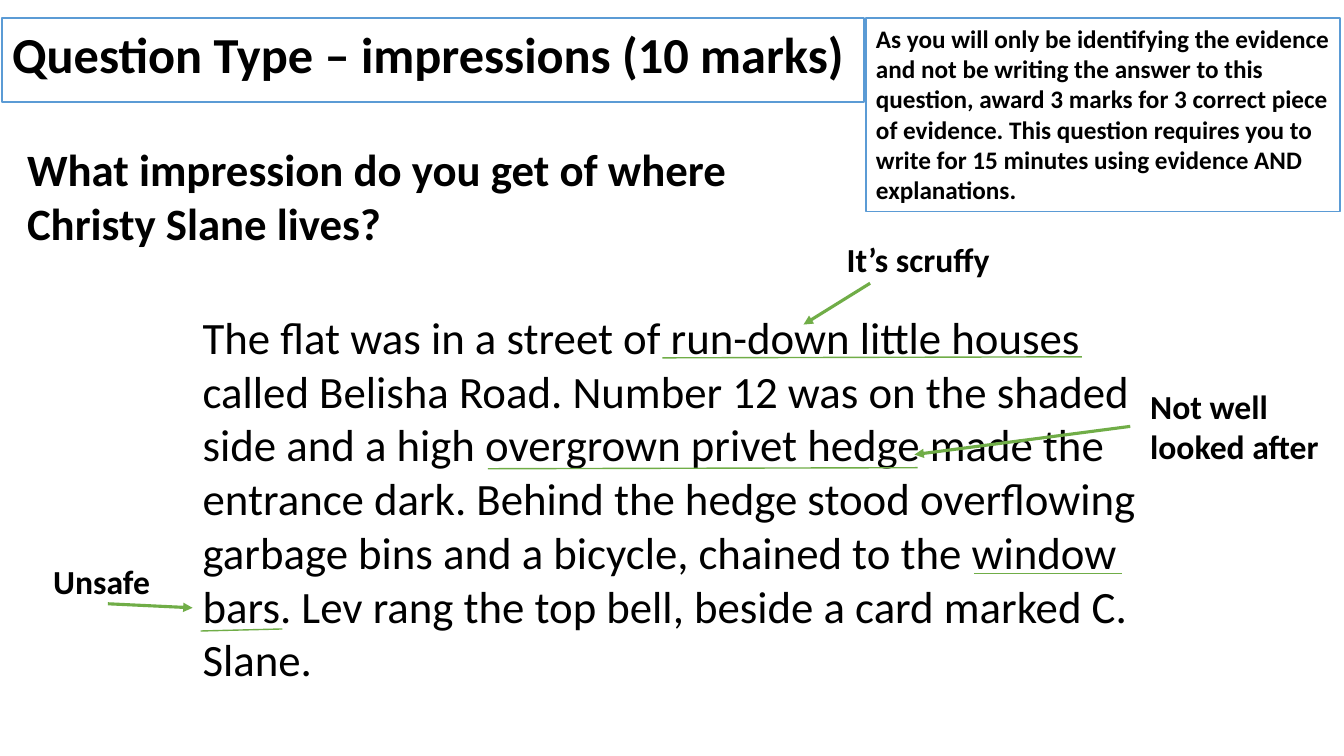
from dataclasses import dataclass

from lxml.etree import SubElement
from pptx import Presentation
from pptx.dml.color import RGBColor
from pptx.enum.shapes import MSO_CONNECTOR as Connector, MSO_SHAPE as Preset
from pptx.enum.text import MSO_ANCHOR as Anchor, MSO_AUTO_SIZE as AutoSize, PP_ALIGN as Align
from pptx.oxml.ns import qn
from pptx.util import Pt

EMU_PER_PX = 9144  # 100 px to the inch


@dataclass(frozen=True)
class Theme:
    font: str = "Calibri"
    ink: RGBColor = RGBColor(0, 0, 0)
    paper: RGBColor = RGBColor(255, 255, 255)
    frame: RGBColor = RGBColor(0x5B, 0x9B, 0xD5)
    marking: RGBColor = RGBColor(0x70, 0xAD, 0x47)
    heading_size: int = 36
    reading_size: int = 32
    note_size: int = 24
    guidance_size: int = 18
    thin: float = 1
    arrow: float = 2.25


THEME = Theme()

HEADING = "Question Type – impressions (10 marks)"
GUIDANCE = (
    "As you will only be identifying the evidence and not be writing the answer "
    "to this question, award 3 marks for 3 correct piece of evidence. This question "
    "requires you to write for 15 minutes using evidence AND explanations."
)
QUESTION = "What impression do you get of where Christy Slane lives?"
PASSAGE = (
    "The flat was in a street of run-down little houses called Belisha Road. "
    "Number 12 was on the shaded side and a high overgrown privet hedge made the "
    "entrance dark. Behind the hedge stood overflowing garbage bins and a bicycle, "
    "chained to the window bars. Lev rang the top bell, beside a card marked C. Slane."
)

# Each impression: wording, box, arrow from note to evidence
IMPRESSIONS = [
    ("It’s scruffy", (830, 232, 220, 50), (863, 281, 797, 322)),
    ("Not well looked after", (1131, 378, 220, 91), (1121, 423, 907, 451)),
    ("Unsafe", (43, 552, 220, 50), (107, 599, 191, 603)),
]

# Underlined evidence: start and end points
UNDERLINES = [
    (657, 355, 1073, 354),
    (484, 465, 910, 464),
    (966, 569, 1113, 569),
    (199, 626, 280, 624),
]


def px(*lengths):
    return [length * EMU_PER_PX for length in lengths]


def write(shape, text, size, bold=True):
    frame = shape.text_frame
    frame.text = text
    frame.word_wrap = True
    frame.auto_size = AutoSize.SHAPE_TO_FIT_TEXT
    frame.vertical_anchor = Anchor.TOP
    paragraph = frame.paragraphs[0]
    paragraph.alignment = Align.LEFT
    paragraph.space_before = Pt(0)
    font = paragraph.runs[0].font
    font.name, font.size, font.bold = THEME.font, Pt(size), bold
    font.color.rgb = THEME.ink


def place(shape, box):
    shape.left, shape.top, shape.width, shape.height = px(*box)


def outline(shape):
    shape.fill.solid()
    shape.fill.fore_color.rgb = THEME.paper
    shape.line.color.rgb = THEME.frame
    shape.line.width = Pt(THEME.thin)


def add_passage(placeholder, text, box):
    place(placeholder, box)
    write(placeholder, text, THEME.reading_size, bold=False)
    # Plain prose: no bullet and no hanging indent
    properties = placeholder.text_frame.paragraphs[0]._p.get_or_add_pPr()
    properties.set("marL", "0")
    properties.set("indent", "0")
    SubElement(properties, qn("a:buNone"))


def add_guidance(slide, text, box):
    guidance = slide.shapes.add_shape(Preset.RECTANGLE, *px(*box))
    guidance.shadow.inherit = False
    outline(guidance)
    write(guidance, text, THEME.guidance_size)


def add_label(slide, text, box, size):
    write(slide.shapes.add_textbox(*px(*box)), text, size)


def add_line(slide, ends, width, arrowhead=False):
    line = slide.shapes.add_connector(Connector.STRAIGHT, *px(*ends))
    line.line.color.rgb = THEME.marking
    line.line.width = Pt(width)
    properties = line._element.spPr
    if arrowhead:
        SubElement(properties.find(qn("a:ln")), qn("a:tailEnd"), type="triangle")
    SubElement(properties, qn("a:effectLst"))


def main():
    deck = Presentation()
    deck.slide_width, deck.slide_height = px(1333, 750)
    slide = deck.slides.add_slide(deck.slide_layouts[1])

    # Heading and reading passage
    heading, passage = slide.placeholders
    place(heading, (2, 18, 855, 71))
    outline(heading)
    write(heading, HEADING, THEME.heading_size)
    add_passage(passage, PASSAGE, (191, 302, 952, 387))

    # Marking guidance and question
    add_guidance(slide, GUIDANCE, (859, 18, 470, 192))
    add_label(slide, QUESTION, (17, 136, 773, 118), THEME.reading_size)

    # Evidence and the impressions it gives
    for ends in UNDERLINES:
        add_line(slide, ends, THEME.thin)
    for wording, box, arrow in IMPRESSIONS:
        add_label(slide, wording, box, THEME.note_size)
        add_line(slide, arrow, THEME.arrow, arrowhead=True)

    deck.save("out.pptx")


if __name__ == "__main__":
    main()
